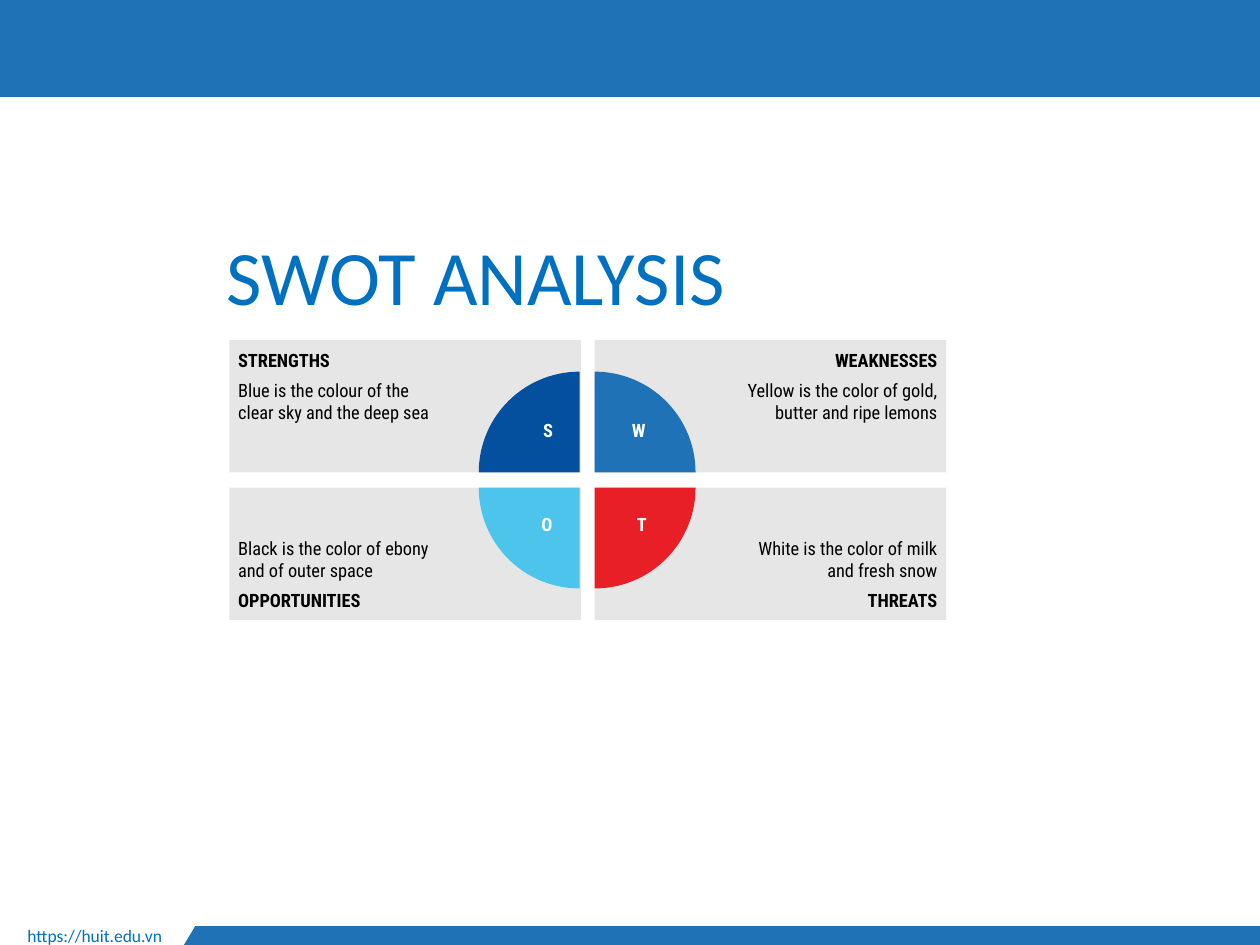
from pptx import Presentation
from pptx.dml.color import RGBColor
from pptx.enum.shapes import MSO_SHAPE
from pptx.enum.text import MSO_ANCHOR, MSO_AUTO_SIZE, PP_ALIGN
from pptx.util import Inches, Pt

RECTANGLE, PIE = MSO_SHAPE.RECTANGLE, MSO_SHAPE.PIE
TOP, BOTTOM = MSO_ANCHOR.TOP, MSO_ANCHOR.BOTTOM
LEFT, CENTER, RIGHT = PP_ALIGN.LEFT, PP_ALIGN.CENTER, PP_ALIGN.RIGHT

BLUE = RGBColor(0x20, 0x72, 0xB7)
NAVY = RGBColor(0x04, 0x4F, 0x9E)
SKY = RGBColor(0x4C, 0xC4, 0xEB)
RED = RGBColor(0xE8, 0x1F, 0x26)
TITLE_BLUE = RGBColor(0x00, 0x70, 0xC0)
GREY = RGBColor(0xE7, 0xE6, 0xE6)
BLACK = RGBColor(0, 0, 0)
WHITE = RGBColor(0xFF, 0xFF, 0xFF)
HEAD_FONT, BODY_FONT = "Calibri", "Roboto Condensed"

# Content: column, row, heading, description, sector colour, rotation,
# letter and its box (left, top, width)
QUADRANTS = [
    (0, 0, "STRENGTHS", "Blue is the colour of the clear sky and the deep sea",
     NAVY, 0, "S", (4.23, 3.28, 0.18)),
    (1, 0, "WEAKNESSES", "Yellow is the color of gold, butter and ripe lemons",
     BLUE, 90, "W", (4.91, 3.28, 0.26)),
    (0, 1, "OPPORTUNITIES", "Black is the color of ebony and of outer space",
     SKY, 270, "O", (4.21, 4.02, 0.2)),
    (1, 1, "THREATS", "White is the color of milk and fresh snow",
     RED, 180, "T", (4.98, 4.02, 0.17)),
]
FOOTER_URL = "https://huit.edu.vn"
FOOTER_BAR = [(1.55, 7.35), (10, 7.35), (10, 7.5), (1.46, 7.5)]

# Grid in inches
GRID_LEFT, GRID_TOP = 1.82, 2.7
PANEL_W, PANEL_H = 2.79, 1.05
STEP_X, STEP_Y = 2.9, 1.17
PIE_LEFT, PIE_TOP, PIE_SIZE, PIE_GAP = 3.8, 2.95, 1.6, 0.12
PAD, PIE_PAD = 0.07, 1.12


def set_insets(frame, left, top, right, bottom):
    frame.margin_left, frame.margin_top = Inches(left), Inches(top)
    frame.margin_right, frame.margin_bottom = Inches(right), Inches(bottom)


def add_run(paragraph, text, size, font, color, bold=False):
    run = paragraph.add_run()
    run.text = text
    run.font.size, run.font.name, run.font.bold = Pt(size), font, bold
    run.font.color.rgb = color


def paint(shape, color):
    shape.shadow.inherit = False
    shape.fill.solid()
    shape.fill.fore_color.rgb = color
    shape.line.fill.background()


def add_filled(slide, kind, left, top, width, height, color):
    shape = slide.shapes.add_shape(
        kind, Inches(left), Inches(top), Inches(width), Inches(height))
    paint(shape, color)
    return shape


def add_label(slide, box, text, size, font, color, bold=False):
    label = slide.shapes.add_textbox(*(Inches(v) for v in box))
    label.text_frame.word_wrap = False
    add_run(label.text_frame.paragraphs[0], text, size, font, color, bold)
    return label.text_frame


def add_panel(slide, column, row, heading, description):
    panel = add_filled(slide, RECTANGLE, GRID_LEFT + column * STEP_X,
                       GRID_TOP + row * STEP_Y, PANEL_W, PANEL_H, GREY)
    frame = panel.text_frame
    frame.word_wrap = True
    frame.vertical_anchor = BOTTOM if row else TOP
    left, right = (PIE_PAD, PAD) if column else (PAD, PIE_PAD)
    set_insets(frame, left, PAD, right, PAD)

    # The heading sits on the outer edge: first above, last below
    lines = [(heading, True), (description, False)]
    if row:
        lines.reverse()
    first, second = frame.paragraphs[0], frame.add_paragraph()
    second.space_before = second.space_after = Pt(4.5)
    for paragraph, (text, bold) in zip((first, second), lines):
        paragraph.alignment = RIGHT if column else LEFT
        add_run(paragraph, text, 10.5, BODY_FONT, BLACK, bold)


def main():
    prs = Presentation()
    prs.slide_width, prs.slide_height = Inches(10), Inches(7.5)
    slide = prs.slides.add_slide(prs.slide_layouts[5])

    # Header band and footer
    add_filled(slide, RECTANGLE, 0, 0, 10, 0.77, BLUE)
    points = [(Inches(x), Inches(y)) for x, y in FOOTER_BAR]
    outline = slide.shapes.build_freeform(*points[0])
    outline.add_line_segments(points[1:], close=True)
    paint(outline.convert_to_shape(), BLUE)
    add_label(slide, (0.12, 7.29, 1.33, 0.28), FOOTER_URL, 10,
              HEAD_FONT, TITLE_BLUE)

    # Title
    title = slide.shapes.title
    title.left, title.top = Inches(1.73), Inches(2.07)
    title.width, title.height = Inches(4.72), Inches(0.56)
    frame = title.text_frame
    frame.auto_size = MSO_AUTO_SIZE.NONE
    frame.word_wrap = True
    frame.vertical_anchor = BOTTOM
    set_insets(frame, PAD, PAD, PAD, PAD)
    heading = frame.paragraphs[0]
    heading.alignment = LEFT
    heading.line_spacing = 0.9
    add_run(heading, "SWOT ANALYSIS", 44, HEAD_FONT, TITLE_BLUE)

    # Panels, then sectors with their letters on top
    for column, row, name, description, *_ in QUADRANTS:
        add_panel(slide, column, row, name, description)
    for column, row, _, _, color, rotation, letter, box in QUADRANTS:
        sector = add_filled(slide, PIE, PIE_LEFT + column * PIE_GAP,
                            PIE_TOP + row * PIE_GAP, PIE_SIZE, PIE_SIZE, color)
        # Angles in units of 5/3 degree: 180 to 270 degrees
        sector.adjustments[0], sector.adjustments[1] = 108, 162
        sector.rotation = rotation
        frame = add_label(slide, (*box, 0.34), letter, 10.5,
                          BODY_FONT, WHITE, True)
        frame.paragraphs[0].alignment = CENTER
        set_insets(frame, 0.06, 0.05, 0, 0.05)

    prs.save("out.pptx")


if __name__ == "__main__":
    main()
